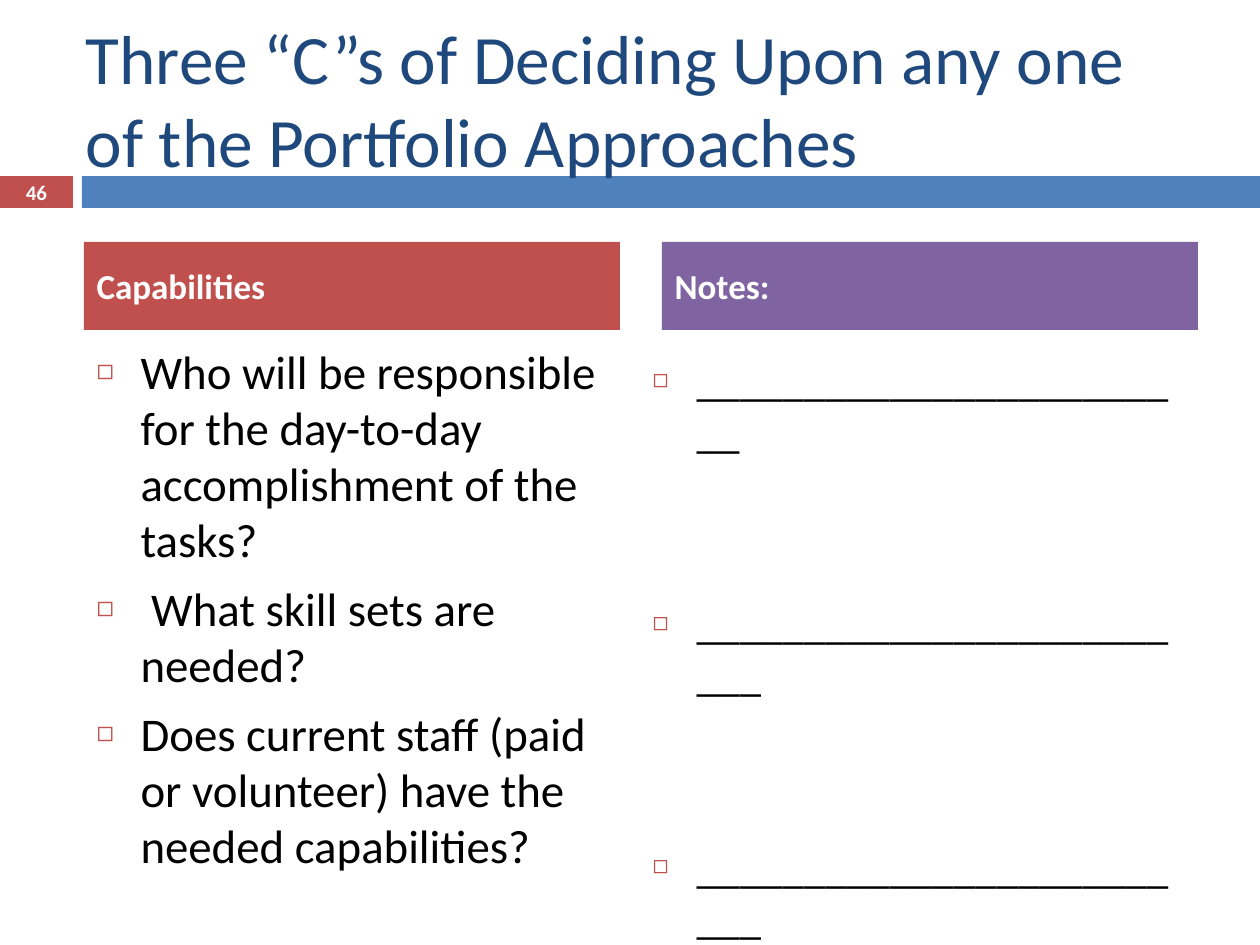
from typing import NamedTuple

from lxml import etree
from pptx import Presentation
from pptx import util as u
from pptx.dml.color import RGBColor
from pptx.enum import shapes, text
from pptx.oxml import ns

PX = 914400 / 126
FONT = "Calibri"
WHITE = RGBColor(0xFF, 0xFF, 0xFF)
BLACK = RGBColor(0x00, 0x00, 0x00)
NAVY = RGBColor(0x1F, 0x49, 0x7D)
BLUE = RGBColor(0x4F, 0x81, 0xBD)
RED = RGBColor(0xC0, 0x50, 0x4D)
PURPLE = RGBColor(0x80, 0x64, 0xA2)


class Box(NamedTuple):
    x: int
    y: int
    w: int
    h: int


class Style(NamedTuple):
    size: float
    color: RGBColor
    bold: bool = False


class Header(NamedTuple):
    idx: int
    box: Box
    label: str
    fill: RGBColor


class BulletList(NamedTuple):
    idx: int
    box: Box
    size: float
    gap: int
    items: list[str]


TITLE = "Three “C”s of Deciding Upon any one of the Portfolio Approaches"
BARS = [(Box(0, 176, 73, 32), RED), (Box(82, 176, 1178, 32), BLUE)]
HEADERS = [
    Header(1, Box(84, 242, 536, 88), "Capabilities", RED),
    Header(3, Box(662, 242, 536, 88), "Notes:", PURPLE),
]
LISTS = [
    BulletList(2, Box(84, 336, 536, 494), 26.8, 7, [
        "Who will be responsible for the day-to-day accomplishment of the tasks?",
        " What skill sets are needed?",
        "Does current staff (paid or volunteer) have the needed capabilities?",
    ]),
    BulletList(4, Box(640, 347, 557, 530), 24.6, 80,
               ["_" * 24, "_" * 25, "_" * 25]),
]


def px(n: int) -> int:
    return round(n * PX)


def place(sp, box: Box) -> None:
    sp.left, sp.top, sp.width, sp.height = map(px, box)


def add_run(p, label: str, style: Style) -> None:
    r = p.add_run()
    r.text = label
    r.font.name = FONT
    r.font.size = u.Pt(style.size)
    r.font.bold = style.bold
    r.font.color.rgb = style.color


def set_label(sp, label: str, style: Style, align=text.PP_ALIGN.LEFT) -> None:
    tf = sp.text_frame
    tf.word_wrap = True
    tf.auto_size = text.MSO_AUTO_SIZE.NONE
    tf.vertical_anchor = text.MSO_ANCHOR.MIDDLE
    p = tf.paragraphs[0]
    p.alignment = align
    add_run(p, label, style)


def add_bar(slide, box: Box, fill: RGBColor) -> None:
    s = slide.shapes.add_shape(shapes.MSO_SHAPE.RECTANGLE, *map(px, box))
    s.shadow.inherit = False
    s.fill.solid()
    s.fill.fore_color.rgb = fill
    s.line.fill.background()
    slide.shapes._spTree.insert(2, s._element)


def add_bullet(p) -> None:
    ppr = p._p.get_or_add_pPr()
    ppr.set("marL", str(px(44)))
    ppr.set("indent", str(px(-44)))
    color = etree.SubElement(ppr, ns.qn("a:buClr"))
    etree.SubElement(color, ns.qn("a:srgbClr"), val=str(RED))
    etree.SubElement(ppr, ns.qn("a:buSzPct"), val="60000")
    etree.SubElement(ppr, ns.qn("a:buChar"), char="◻")


def fill_header(sp, header: Header) -> None:
    place(sp, header.box)
    sp.fill.solid()
    sp.fill.fore_color.rgb = header.fill
    set_label(sp, header.label, Style(20, WHITE, True))
    sp.text_frame.paragraphs[0].space_before = u.Pt(7)


def fill_list(sp, bullets: BulletList) -> None:
    place(sp, bullets.box)
    tf = sp.text_frame
    tf.word_wrap = True
    tf.auto_size = text.MSO_AUTO_SIZE.NONE
    for i, item in enumerate(bullets.items):
        p = tf.add_paragraph() if i else tf.paragraphs[0]
        p.space_before = u.Pt(bullets.gap if i else 7)
        add_bullet(p)
        add_run(p, item, Style(bullets.size, BLACK))


def main() -> None:
    prs = Presentation()
    prs.slide_width, prs.slide_height = px(1260), px(945)
    slide = prs.slides.add_slide(prs.slide_layouts.get_by_name("Comparison"))
    holders = {sp.placeholder_format.idx: sp for sp in slide.placeholders}

    for box, fill in BARS:
        add_bar(slide, box, fill)
    place(holders[0], Box(73, 38, 1124, 120))
    set_label(holders[0], TITLE, Style(39.6, NAVY))
    for header in HEADERS:
        fill_header(holders[header.idx], header)
    for bullets in LISTS:
        fill_list(holders[bullets.idx], bullets)

    number = slide.shapes.add_textbox(*map(px, Box(0, 175, 73, 34)))
    set_label(number, "46", Style(11.9, WHITE, True), text.PP_ALIGN.CENTER)
    prs.save("out.pptx")


if __name__ == "__main__":
    main()
